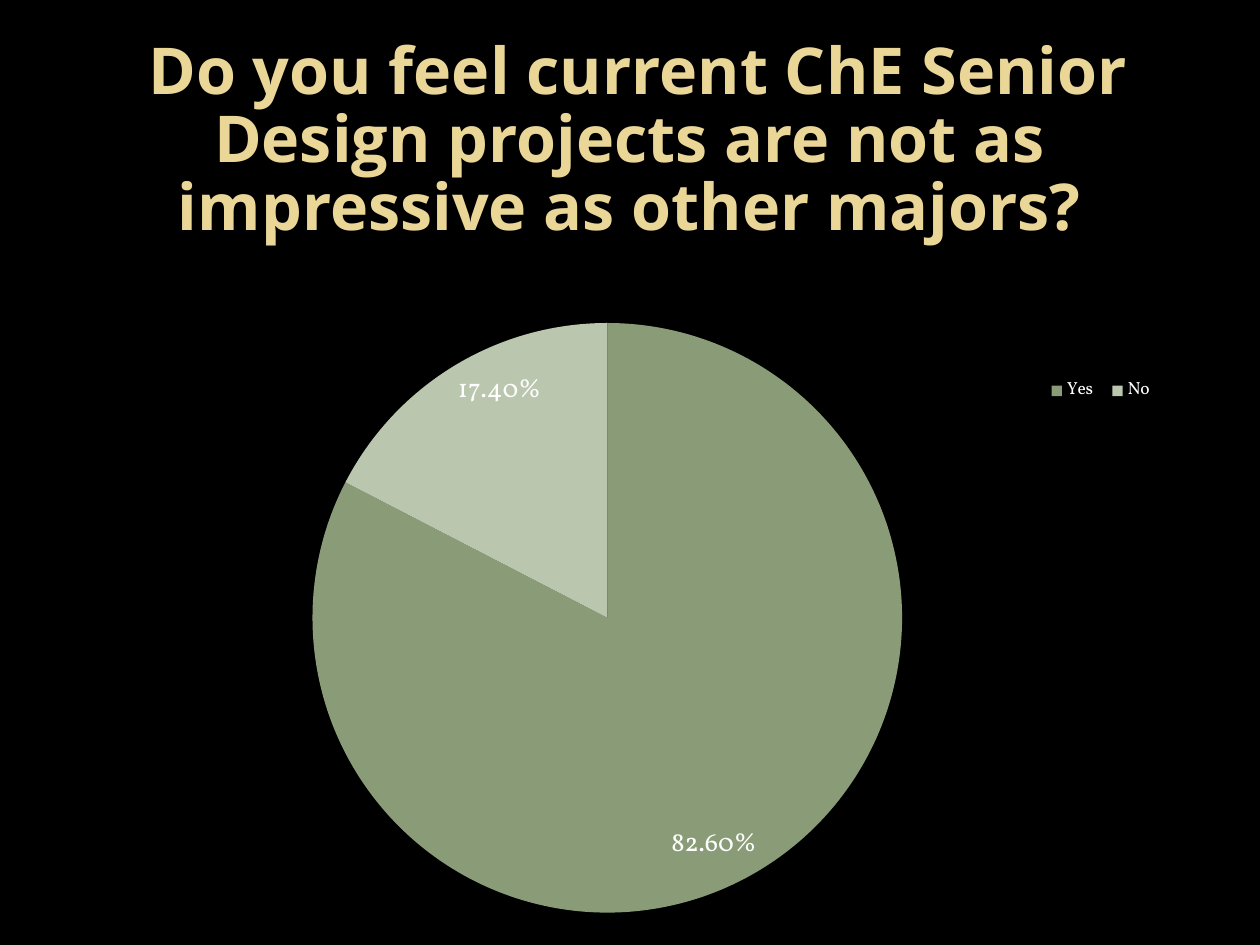
from lxml import etree
from pptx import Presentation
from pptx.chart.data import CategoryChartData
from pptx.dml.color import RGBColor
from pptx.enum.chart import XL_CHART_TYPE, XL_LABEL_POSITION, XL_LEGEND_POSITION
from pptx.enum.text import MSO_ANCHOR, PP_ALIGN
from pptx.oxml.ns import qn
from pptx.util import Cm, Pt

PIE = XL_CHART_TYPE.PIE
INSIDE = XL_LABEL_POSITION.INSIDE_END
RIGHT = XL_LEGEND_POSITION.RIGHT
MIDDLE = MSO_ANCHOR.MIDDLE
CENTER = PP_ALIGN.CENTER
HUES = {"back": "000000", "title": "EAD696", "text": "FFFFFF",
        "Yes": "8A9C77", "No": "BAC6AD"}
VOTES = {"Yes": 0.826, "No": 0.174}


def color(name):
    return RGBColor.from_string(HUES[name])


def place(part, after, inner, box):
    for old in part.findall(qn("c:layout")):
        part.remove(old)
    layout = etree.Element(qn("c:layout"))
    manual = etree.SubElement(layout, qn("c:manualLayout"))
    rules = [("layoutTarget", "inner")] if inner else []
    rules += [("xMode", "edge"), ("yMode", "edge")]
    rules += zip("xywh", box)
    for tag, val in rules:
        etree.SubElement(manual, qn("c:" + tag)).set("val", str(val))
    if after is None:
        part.insert(0, layout)
    else:
        after.addnext(layout)


deck = Presentation()
deck.slide_width, deck.slide_height = Cm(25.4), Cm(19.05)
slide = deck.slides.add_slide(deck.slide_layouts[6])
fill = slide.background.fill
fill.solid()
fill.fore_color.rgb = color("back")

title = slide.shapes.add_textbox(Cm(1.27), Cm(1.27), Cm(22.86), Cm(3.18))
frame = title.text_frame
frame.word_wrap = True
frame.vertical_anchor = MIDDLE
para = frame.paragraphs[0]
para.text = " Do you feel current ChE Senior Design projects are not as impressive as other majors?"
para.alignment = CENTER
para.line_spacing = 0.88
para.font.name = "Open Sans"
para.font.size = Pt(36.9)
para.font.bold = True
para.font.color.rgb = color("title")

data = CategoryChartData(number_format="0.00%")
data.categories = list(VOTES)
data.add_series("Series 1", list(VOTES.values()))
chart = slide.shapes.add_chart(
    PIE, Cm(1.27), Cm(5.72), Cm(22.86), Cm(13.08), data).chart
chart.has_title = False
chart.font.name = "Vollkorn"
chart.font.size = Pt(10)
chart.font.color.rgb = color("text")

plot = chart.plots[0]
plot.vary_by_categories = True
for i, name in enumerate(VOTES):
    fill = plot.series[0].points[i].format.fill
    fill.solid()
    fill.fore_color.rgb = color(name)

plot.has_data_labels = True
labels = plot.data_labels
labels.show_value = True
labels.show_percentage = False
labels.number_format = "0.00%"
labels.number_format_is_linked = False
labels.position = INSIDE
labels.font.name = "Vollkorn"
labels.font.size = Pt(15)
labels.font.color.rgb = color("text")

chart.has_legend = True
legend = chart.legend
legend.position = RIGHT
legend.include_in_layout = False
area = chart.element.find(".//" + qn("c:plotArea"))
key = chart.element.find(".//" + qn("c:legend"))
place(area, None, True, (0.22, 0.06, 0.52, 0.91))
place(key, key.find(qn("c:legendPos")), False, (0.86, 0.14, 0.11, 0.05))

deck.save("out.pptx")
